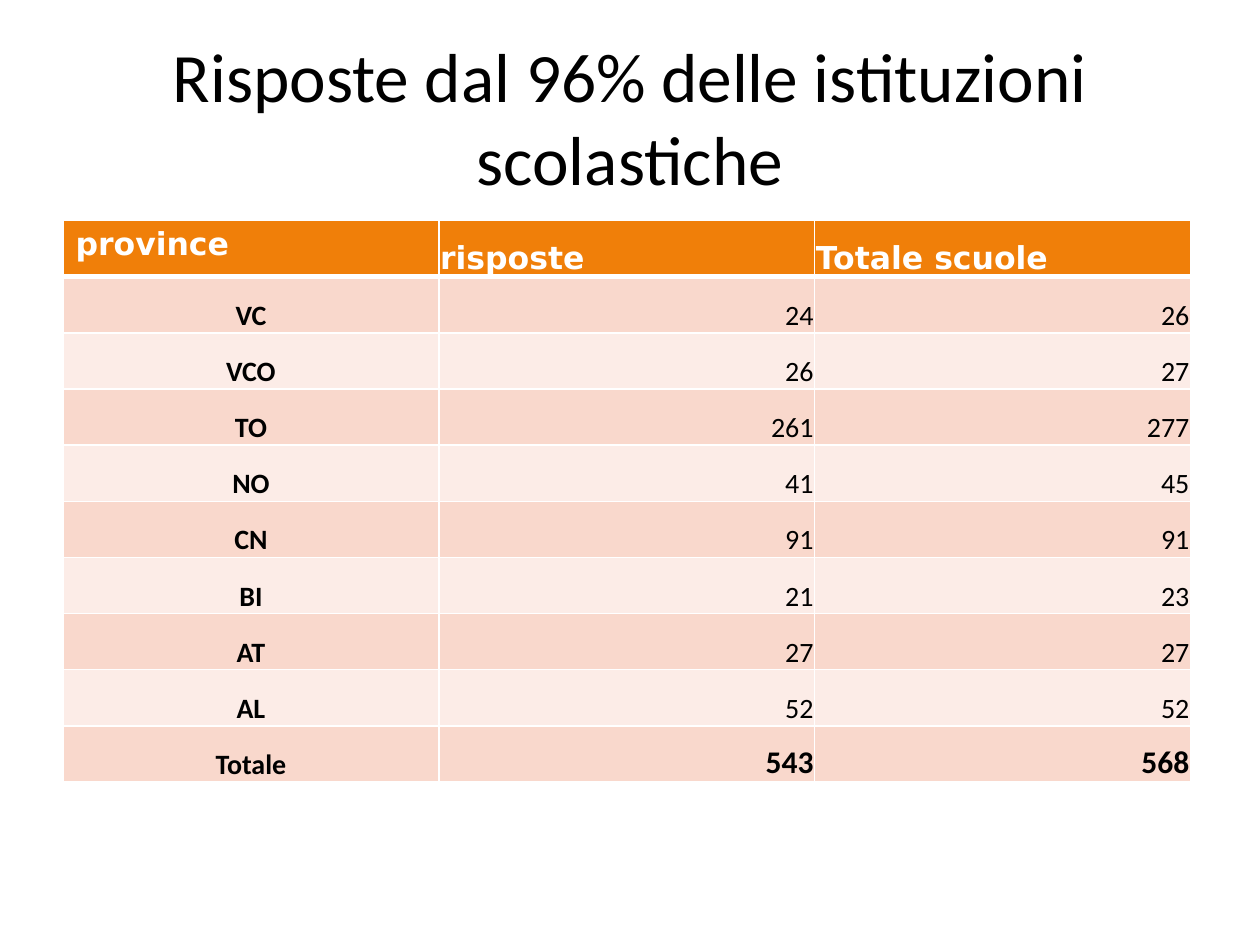
from lxml import etree
from pptx import Presentation
from pptx.dml.color import RGBColor
from pptx.enum.text import MSO_ANCHOR, MSO_AUTO_SIZE, PP_ALIGN
from pptx.oxml.ns import qn
from pptx.util import Inches, Pt

LEFT, CENTER, RIGHT = PP_ALIGN.LEFT, PP_ALIGN.CENTER, PP_ALIGN.RIGHT
TOP, MIDDLE, BOTTOM = MSO_ANCHOR.TOP, MSO_ANCHOR.MIDDLE, MSO_ANCHOR.BOTTOM
NO_FIT = MSO_AUTO_SIZE.NONE

COLORS = {
    "header": "F07F09",
    "odd": "F9D8CC",
    "even": "FCECE7",
    "border": "FFFFFF",
    "light": "FFFFFF",
    "dark": "000000",
}
TITLE = "Risposte dal 96% delle istituzioni scolastiche"
HEADERS = ("province", "risposte", "Totale scuole")
ANSWERS = [
    ("VC", 24, 26),
    ("VCO", 26, 27),
    ("TO", 261, 277),
    ("NO", 41, 45),
    ("CN", 91, 91),
    ("BI", 21, 23),
    ("AT", 27, 27),
    ("AL", 52, 52),
    ("Totale", 543, 568),
]
FORMATS = {
    "title": {"size": Pt(39.6), "name": "Calibri", "bold": False},
    "header": {"size": Pt(18), "name": "DejaVu Sans", "bold": True},
    "province": {"size": Pt(16), "name": "Calibri", "bold": True},
    "count": {"size": Pt(16), "name": "Calibri", "bold": False},
    "total": {"size": Pt(18), "name": "Calibri", "bold": True},
}
TIGHT = {
    "margin_left": Inches(0.01),
    "margin_right": Inches(0.01),
    "margin_top": Inches(0.01),
    "margin_bottom": 0,
    "vertical_anchor": BOTTOM,
}


def set_all(obj, values):
    for key, value in values.items():
        setattr(obj, key, value)


def write(p, text, style, color, align):
    p.alignment = align
    r = p.add_run()
    r.text = text
    set_all(r.font, FORMATS[style])
    r.font.color.rgb = RGBColor.from_string(COLORS[color])


def add_borders(cell, widths):
    tc_pr = cell._tc.get_or_add_tcPr()
    for side, width in widths.items():
        ln = etree.SubElement(tc_pr, qn(f"a:ln{side}"), w=str(Pt(width)))
        fill = etree.SubElement(ln, qn("a:solidFill"))
        etree.SubElement(fill, qn("a:srgbClr"), val=COLORS["border"])


def cell_style(row, col):
    if row == 0:
        return "header", "light", LEFT
    if col == 0:
        return "province", "dark", CENTER
    return ("total" if row == len(ANSWERS) else "count"), "dark", RIGHT


def add_title(s, box):
    sp = s.shapes.title
    set_all(sp, dict(zip(("left", "top", "width", "height"), box)))
    tf = sp.text_frame
    set_all(tf, {"word_wrap": True, "auto_size": NO_FIT, "vertical_anchor": MIDDLE})
    write(tf.paragraphs[0], TITLE, "title", "dark", CENTER)


def add_answers_table(s, box):
    rows = [HEADERS, *ANSWERS]
    table = s.shapes.add_table(len(rows), len(HEADERS), *box).table
    for row, values in enumerate(rows):
        band = "header" if row == 0 else ("even", "odd")[row % 2]
        widths = {"L": 1, "R": 1, "T": 3 if row == 1 else 1, "B": 3 if row == 0 else 1}
        for col, value in enumerate(values):
            cell = table.cell(row, col)
            add_borders(cell, widths)
            cell.fill.solid()
            cell.fill.fore_color.rgb = RGBColor.from_string(COLORS[band])
            set_all(cell, {"vertical_anchor": TOP} if row == col == 0 else TIGHT)
            write(cell.text_frame.paragraphs[0], str(value), *cell_style(row, col))


def main():
    prs = Presentation()
    prs.slide_width, prs.slide_height = Inches(10), Inches(7.5)
    w, h = prs.slide_width, prs.slide_height
    s = prs.slides.add_slide(prs.slide_layouts[5])
    add_title(s, (int(w * 0.05), int(h * 0.04), int(w * 0.9), Inches(1.25)))
    add_answers_table(s, (int(w * 0.05), Inches(1.75), Inches(8.95), Inches(4.46)))
    prs.save("out.pptx")


if __name__ == "__main__":
    main()
